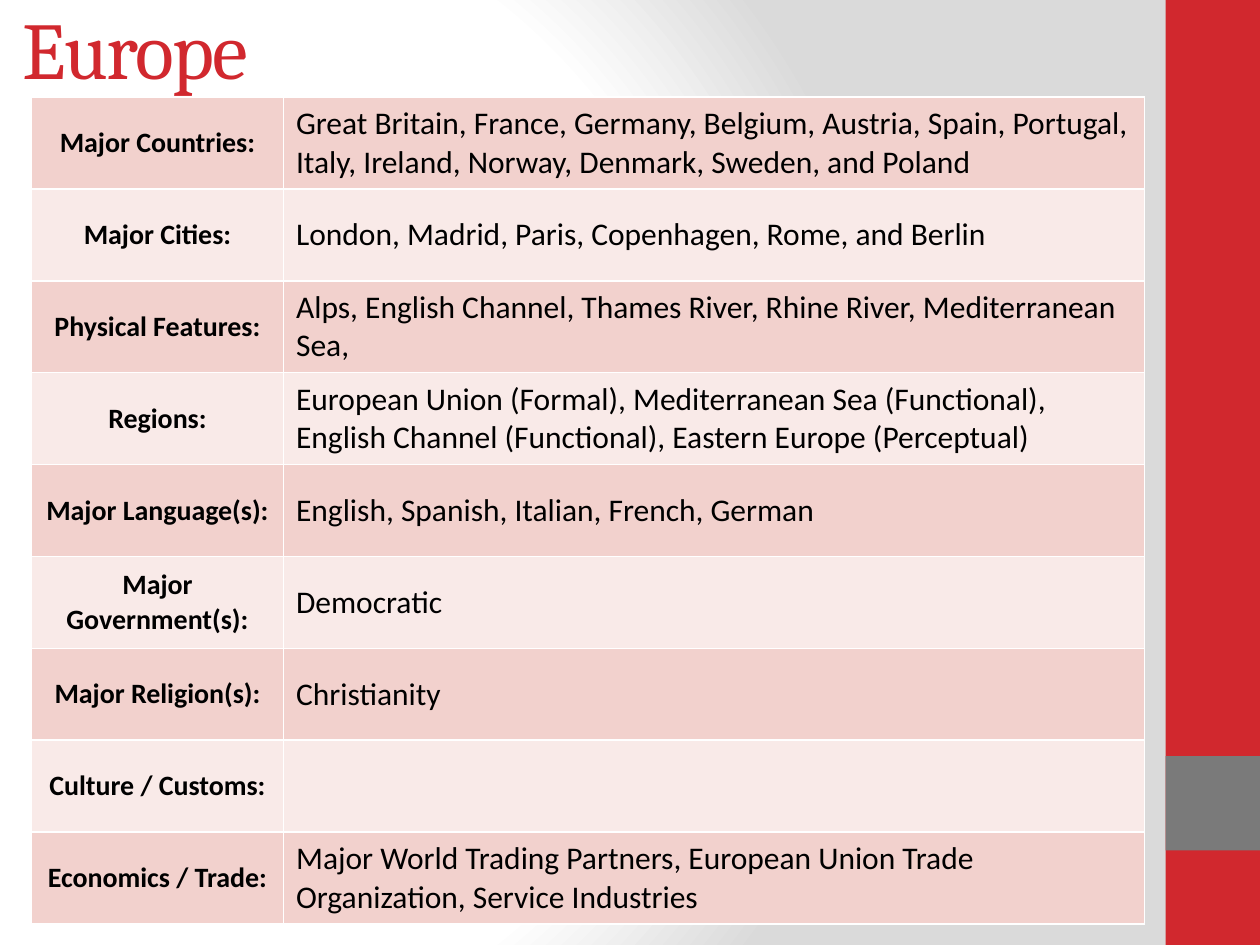
import pptx
import pptx.util
import pptx.oxml
import pptx.oxml.ns
import pptx.dml.color
import pptx.enum.shapes
import pptx.enum.text
from lxml import etree

Pt = pptx.util.Pt
RGB = pptx.dml.color.RGBColor.from_string
ALIGN = pptx.enum.text.PP_ALIGN
MIDDLE = pptx.enum.text.MSO_ANCHOR.MIDDLE
NS = pptx.oxml.ns.nsdecls("a", "p")

colors = {"red": "D1282E", "gray": "7A7A7A", "rose": "F2D1CD", "pale": "F9EAE8",
          "white": "FFFFFF", "black": "000000", "silver": "DADADA"}

facts = [
    ("Major Countries:", "Great Britain, France, Germany, Belgium, Austria, Spain, Portugal, "
     "Italy, Ireland, Norway, Denmark, Sweden, and Poland"),
    ("Major Cities:", "London, Madrid, Paris, Copenhagen, Rome, and Berlin"),
    ("Physical Features:", "Alps, English Channel, Thames River, Rhine River, Mediterranean Sea,"),
    ("Regions:", "European Union (Formal), Mediterranean Sea (Functional), "
     "English Channel (Functional), Eastern Europe (Perceptual)"),
    ("Major Language(s):", "English, Spanish, Italian, French, German"),
    ("Major Government(s):", "Democratic"),
    ("Major Religion(s):", "Christianity"),
    ("Culture / Customs:", ""),
    ("Economics / Trade:", "Major World Trading Partners, European Union Trade Organization, "
     "Service Industries"),
]


def write(para, text, color, **font):
    """Add a run with the given colour and font values."""
    run = para.add_run()
    run.text = text
    run.font.color.rgb = RGB(colors[color])
    for name, value in font.items():
        setattr(run.font, name, value)
    return run


def frame(cell):
    """Draw a thin white line on every side of a cell."""
    props = cell._tc.get_or_add_tcPr()
    for i, side in enumerate(("lnL", "lnR", "lnT", "lnB")):
        props.insert(i, pptx.oxml.parse_xml(
            f'<a:{side} {NS} w="{Pt(1)}"><a:solidFill>'
            f'<a:srgbClr val="{colors["white"]}"/></a:solidFill></a:{side}>'))


deck = pptx.Presentation()
deck.slide_width, deck.slide_height = Pt(720), Pt(540)
slide = deck.slides.add_slide(deck.slide_layouts[6])

# Background: white glow fading to silver
slide.background.fill.gradient()
grad = slide.element.find(".//" + pptx.oxml.ns.qn("a:gradFill"))
for child in list(grad):
    grad.remove(child)
stops = etree.SubElement(grad, pptx.oxml.ns.qn("a:gsLst"))
for place, color in ((0, "white"), (75, "white"), (100, "silver")):
    stops.append(pptx.oxml.parse_xml(
        f'<a:gs {NS} pos="{place * 1000}"><a:srgbClr val="{colors[color]}"/></a:gs>'))
grad.append(pptx.oxml.parse_xml(
    f'<a:path {NS} path="circle">'
    '<a:fillToRect l="20000" t="50000" r="100000" b="50000"/></a:path>'))

# Side band
for top, height, color in ((0, 540, "red"), (432, 54, "gray")):
    band = slide.shapes.add_shape(pptx.enum.shapes.MSO_SHAPE.RECTANGLE,
                                  Pt(666), Pt(top), Pt(54), Pt(height))
    band.shadow.inherit = False
    band.fill.solid()
    band.fill.fore_color.rgb = RGB(colors[color])
    band.line.fill.background()

# Title
title = slide.shapes.add_textbox(Pt(6), Pt(-18), Pt(600), Pt(90)).text_frame
title.word_wrap = True
title.vertical_anchor = MIDDLE
run = write(title.paragraphs[0], "Europe", "red", name="Cambria", size=Pt(46))
run.font._element.set("spc", "-100")

# Fact table
row_height = 52.5
table = slide.shapes.add_table(len(facts), 2, Pt(18), Pt(55.5), Pt(636),
                               Pt(row_height * len(facts))).table
for col, width in zip(table.columns, (144, 492)):
    col.width = Pt(width)

looks = [(ALIGN.CENTER, {"size": Pt(16), "bold": True}),
         (ALIGN.LEFT, {"size": Pt(18), "bold": False})]
for r, fact in enumerate(facts):
    table.rows[r].height = Pt(row_height)
    for c, (text, (align, font)) in enumerate(zip(fact, looks)):
        cell = table.cell(r, c)
        cell.vertical_anchor = MIDDLE
        cell.fill.solid()
        cell.fill.fore_color.rgb = RGB(colors["pale" if r % 2 else "rose"])
        frame(cell)
        para = cell.text_frame.paragraphs[0]
        para.alignment = align
        if text:
            write(para, text, "black", name="Calibri", **font)

deck.save("out.pptx")
